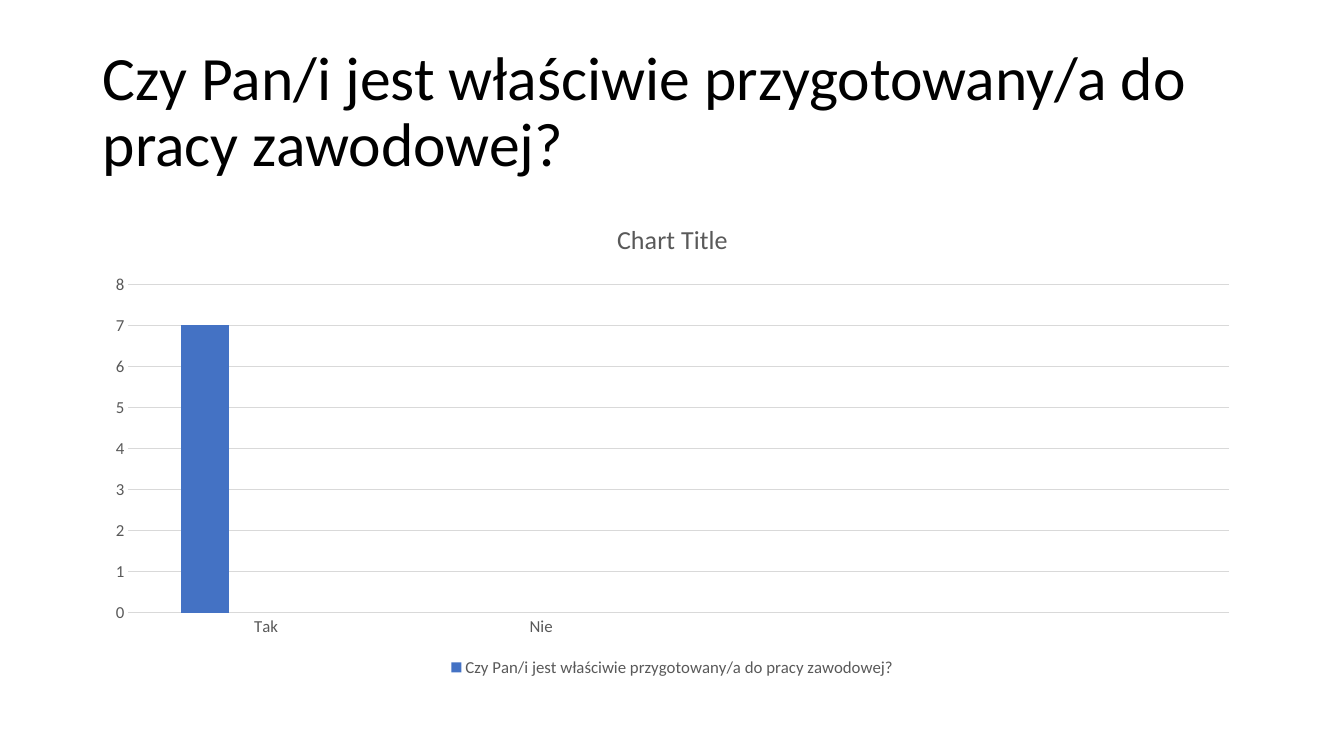
from lxml import etree
from pptx import Presentation
from pptx.chart.data import CategoryChartData
from pptx.dml.color import RGBColor
from pptx.enum.chart import XL_CHART_TYPE, XL_LEGEND_POSITION, XL_TICK_MARK
from pptx.enum.text import MSO_ANCHOR, PP_ALIGN
from pptx.oxml.ns import qn
from pptx.util import Inches, Pt

COLUMN = XL_CHART_TYPE.COLUMN_CLUSTERED
BOTTOM = XL_LEGEND_POSITION.BOTTOM
NO_TICK = XL_TICK_MARK.NONE

QUESTION = "Czy Pan/i jest właściwie przygotowany/a do pracy zawodowej?"
CHART_TITLE = "Chart Title"
CATEGORIES = ["Tak", "Nie", "", ""]
EMPTY = [None] * len(CATEGORIES)
SERIES = [
    (QUESTION, [7, None, None, None], "blue"),
    ("Series 2", EMPTY, "orange"),
    ("Series 3", EMPTY, "gray"),
]
HIDDEN_IN_LEGEND = [1, 2]
COLORS = {"title": "000000", "label": "595959", "line": "D9D9D9",
          "blue": "4472C4", "orange": "ED7D31", "gray": "A5A5A5"}
FONT = "Calibri"
WIDTH, HEIGHT = 13.33, 7.5
MARGIN = 0.92
CONTENT_WIDTH = 11.5
TITLE_TOP, TITLE_HEIGHT = 0.4, 1.45
CHART_TOP, CHART_HEIGHT = 2, 4.76


def rgb(name):
    return RGBColor.from_string(COLORS[name])


def style_font(font, size, color):
    font.name, font.size, font.bold = FONT, Pt(size), False
    font.color.rgb = rgb(color)


def style_line(line):
    line.color.rgb = rgb("line")
    line.width = Pt(0.75)


def content_box(top, height):
    return [Inches(v) for v in (MARGIN, top, CONTENT_WIDTH, height)]


def hide_legend_entries(legend, indexes):
    position = legend._element.find(qn("c:legendPos"))
    for index in reversed(indexes):
        entry = etree.Element(qn("c:legendEntry"))
        etree.SubElement(entry, qn("c:idx")).set("val", str(index))
        etree.SubElement(entry, qn("c:delete")).set("val", "1")
        position.addnext(entry)


def add_title(slide):
    title = slide.shapes.title
    title.left, title.top, title.width, title.height = content_box(TITLE_TOP, TITLE_HEIGHT)
    tf = title.text_frame
    tf.text = QUESTION
    tf.word_wrap = True
    tf.vertical_anchor = MSO_ANCHOR.MIDDLE
    p = tf.paragraphs[0]
    p.alignment = PP_ALIGN.LEFT
    p.line_spacing = 0.9
    style_font(p.font, 44, "title")


def add_answers_chart(slide):
    data = CategoryChartData()
    data.categories = CATEGORIES
    for name, values, _ in SERIES:
        data.add_series(name, values)
    chart = slide.shapes.add_chart(COLUMN, *content_box(CHART_TOP, CHART_HEIGHT), data).chart
    style_font(chart.font, 12, "label")

    tf = chart.chart_title.text_frame
    tf.text = CHART_TITLE
    style_font(tf.paragraphs[0].font, 18.6, "label")
    chart.chart_title.include_in_layout = False

    plot = chart.plots[0]
    plot.gap_width, plot.overlap = 219, -27
    plot.vary_by_categories = False
    for series, (_, _, color) in zip(plot.series, SERIES):
        series.format.fill.solid()
        series.format.fill.fore_color.rgb = rgb(color)

    for axis in (chart.category_axis, chart.value_axis):
        axis.major_tick_mark = axis.minor_tick_mark = NO_TICK
        style_font(axis.tick_labels.font, 12, "label")
    style_line(chart.category_axis.format.line)
    chart.value_axis.format.line.fill.background()
    style_line(chart.value_axis.major_gridlines.format.line)

    chart.has_legend = True
    legend = chart.legend
    legend.position = BOTTOM
    legend.include_in_layout = False
    style_font(legend.font, 12, "label")
    hide_legend_entries(legend, HIDDEN_IN_LEGEND)


def main():
    prs = Presentation()
    prs.slide_width, prs.slide_height = Inches(WIDTH), Inches(HEIGHT)
    slide = prs.slides.add_slide(prs.slide_layouts.get_by_name("Title Only"))
    add_title(slide)
    add_answers_chart(slide)
    prs.save("out.pptx")


if __name__ == "__main__":
    main()
